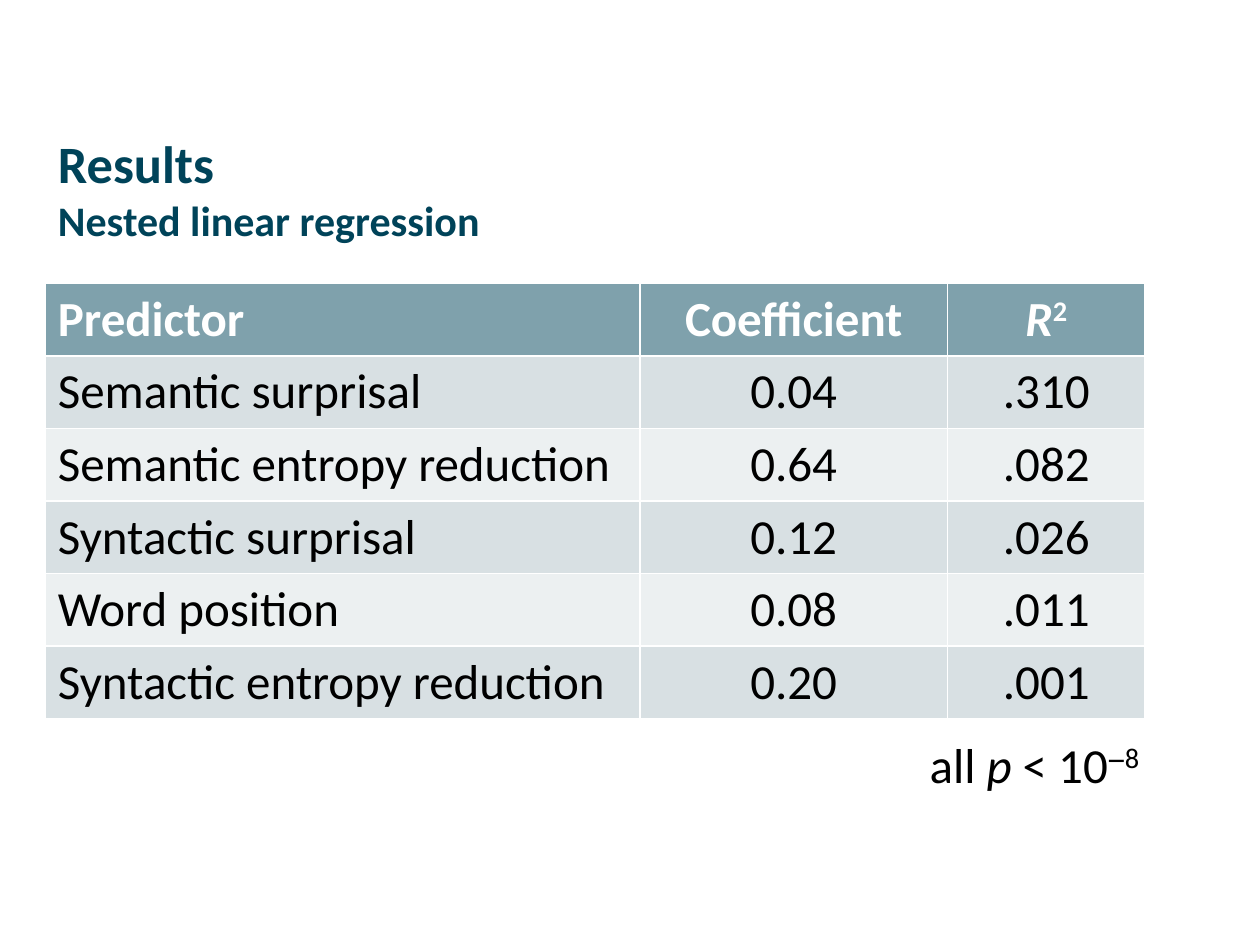
from pptx import Presentation
from pptx import util as u
from pptx.dml.color import RGBColor
from pptx.enum import text

NAVY = RGBColor(0x00, 0x43, 0x59)
TEAL = RGBColor(0x7F, 0xA1, 0xAC)
BAND_DARK = RGBColor(0xD8, 0xE0, 0xE3)
BAND_LIGHT = RGBColor(0xEC, 0xF0, 0xF1)
WHITE = RGBColor(0xFF, 0xFF, 0xFF)
BLACK = RGBColor(0x00, 0x00, 0x00)

BODY_FONT = "Calibri"
MINUS_FONT = "TeX Gyre Schola"

COLUMN_WIDTHS = (4.72, 2.44, 1.57)
HEADINGS = ("Predictor", "Coefficient", "R")
RESULTS = (
    ("Semantic surprisal", "0.04", ".310"),
    ("Semantic entropy reduction", "0.64", ".082"),
    ("Syntactic surprisal", "0.12", ".026"),
    ("Word position", "0.08", ".011"),
    ("Syntactic entropy reduction", "0.20", ".001"),
)


def style_paragraph(paragraph, color, size=28, bold=False):
    font = paragraph.font
    font.name, font.size, font.bold = BODY_FONT, u.Pt(size), bold
    font.color.rgb = color


def add_run(paragraph, wording, italic=None, superscript=False):
    run = paragraph.add_run()
    run.text = wording
    run.font.italic = italic
    if superscript:
        run.font._element.set("baseline", "30000")
    return run


def add_title(slide):
    title = slide.shapes.title
    title.left, title.top = u.Inches(0.36), u.Inches(0.99)
    title.width, title.height = u.Inches(9.28), u.Inches(1.42)
    frame = title.text_frame
    frame.auto_size = text.MSO_AUTO_SIZE.NONE
    frame.vertical_anchor = text.MSO_ANCHOR.TOP
    heading = frame.paragraphs[0]
    heading.alignment = text.PP_ALIGN.LEFT
    style_paragraph(heading, NAVY, size=30, bold=True)
    add_run(heading, "Results")
    heading.add_line_break()
    add_run(heading, "Nested linear regression").font.size = u.Pt(24)


def add_results_table(slide):
    rows = (HEADINGS, *RESULTS)
    table = slide.shapes.add_table(
        len(rows), len(HEADINGS), u.Inches(0.36), u.Inches(2.25),
        u.Inches(sum(COLUMN_WIDTHS)), u.Inches(3.4)).table
    for column, width in zip(table.columns, COLUMN_WIDTHS):
        column.width = u.Inches(width)

    for r, row in enumerate(rows):
        is_header = r == 0
        band = TEAL if is_header else (BAND_LIGHT, BAND_DARK)[r % 2]
        for c, wording in enumerate(row):
            cell = table.cell(r, c)
            cell.fill.solid()
            cell.fill.fore_color.rgb = band
            entry = cell.text_frame.paragraphs[0]
            if c > 0:
                entry.alignment = text.PP_ALIGN.CENTER
            style_paragraph(entry, WHITE if is_header else BLACK, bold=is_header)
            is_r_squared = wording == "R"
            add_run(entry, wording, italic=is_r_squared or None)
            if is_r_squared:
                add_run(entry, "2", superscript=True)


def add_significance_note(slide):
    note = slide.shapes.add_textbox(
        u.Inches(7.28), u.Inches(5.78), u.Inches(2.2), u.Inches(0.57))
    note.text_frame.word_wrap = True
    note.text_frame.auto_size = text.MSO_AUTO_SIZE.SHAPE_TO_FIT_TEXT
    significance = note.text_frame.paragraphs[0]
    style_paragraph(significance, BLACK)
    add_run(significance, "all ")
    add_run(significance, "p", italic=True)
    add_run(significance, " < 10")
    add_run(significance, "−", superscript=True).font.name = MINUS_FONT
    add_run(significance, "8", superscript=True)


def main():
    deck = Presentation()
    deck.slide_width, deck.slide_height = u.Inches(10), u.Inches(7.5)
    slide = deck.slides.add_slide(deck.slide_layouts[5])  # title only
    add_title(slide)
    add_results_table(slide)
    add_significance_note(slide)
    deck.save("out.pptx")


if __name__ == "__main__":
    main()
